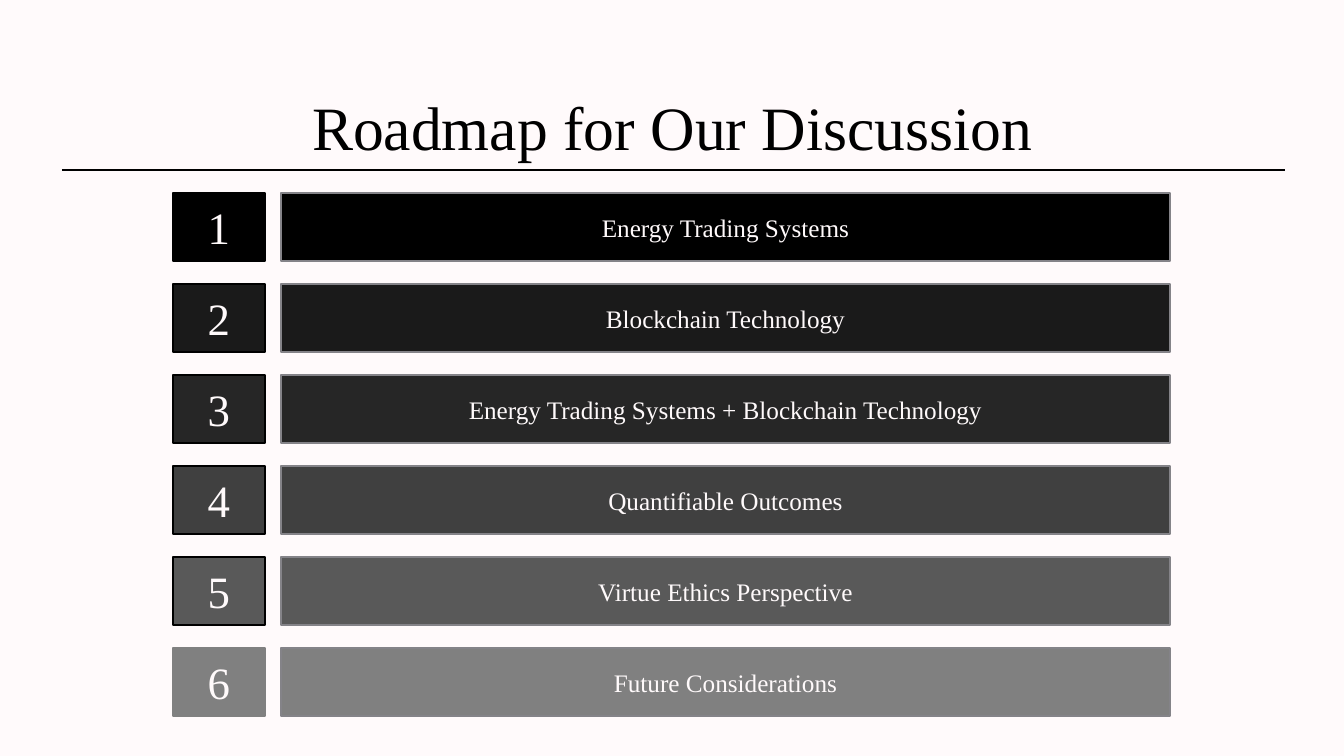
from lxml import etree
from pptx import Presentation
from pptx.dml.color import RGBColor
from pptx.enum.shapes import MSO_CONNECTOR, MSO_SHAPE
from pptx.enum.text import MSO_ANCHOR, PP_ALIGN
from pptx.oxml.ns import qn
from pptx.util import Pt

RECTANGLE = MSO_SHAPE.RECTANGLE
STRAIGHT = MSO_CONNECTOR.STRAIGHT
MIDDLE = MSO_ANCHOR.MIDDLE
CENTER = PP_ALIGN.CENTER

FONT = "Times New Roman"
BLACK, GREY, EDGE, PAPER = "000000", "808080", "848388", "FFFAFB"
EMU_PER_PX = 914400 / 100.8


def px(*lengths):
    """Turn pixel lengths into a list of EMU."""
    return [round(length * EMU_PER_PX) for length in lengths]


def write(shape, text, size, color):
    """Set one centred line of text in the shape."""
    frame = shape.text_frame
    frame.word_wrap = True
    frame.vertical_anchor = MIDDLE
    para = frame.paragraphs[0]
    para.text = text
    para.alignment = CENTER
    para.font.name = FONT
    para.font.size = Pt(size)
    para.font.color.rgb = RGBColor.from_string(color)


deck = Presentation()
deck.slide_width, deck.slide_height = px(1344, 756)
page = deck.slides.add_slide(deck.slide_layouts[6])
page.background.fill.solid()
page.background.fill.fore_color.rgb = RGBColor.from_string(PAPER)

title = page.shapes.add_textbox(*px(93, 74, 1159, 113))
write(title, "Roadmap for Our Discussion", 44, BLACK)
title.text_frame.paragraphs[0].line_spacing = 0.9

rule = page.shapes.add_connector(STRAIGHT, *px(62, 170, 1285, 170))
rule.line.color.rgb = RGBColor.from_string(BLACK)
rule.line.width = Pt(1.5)
etree.SubElement(rule._element.spPr, qn("a:effectLst"))

# Agenda rows: topic, fill, outline of the number box
topics = [
    ("Energy Trading Systems", "000000", BLACK),
    ("Blockchain Technology", "1A1A1A", BLACK),
    ("Energy Trading Systems + Blockchain Technology", "262626", BLACK),
    ("Quantifiable Outcomes", "404040", BLACK),
    ("Virtue Ethics Perspective", "595959", BLACK),
    ("Future Considerations", GREY, GREY),
]
FIRST_TOP, ROW_PITCH, ROW_HEIGHT = 193, 91, 68

for row, (topic, fill, number_edge) in enumerate(topics):
    top = FIRST_TOP + row * ROW_PITCH
    cells = [
        (173, 92, str(row + 1), 32, number_edge),
        (281, 889, topic, 18, EDGE),
    ]
    for left, width, text, size, edge in cells:
        box = page.shapes.add_shape(RECTANGLE, *px(left, top, width, ROW_HEIGHT))
        box.shadow.inherit = False
        box.fill.solid()
        box.fill.fore_color.rgb = RGBColor.from_string(fill)
        box.line.color.rgb = RGBColor.from_string(edge)
        box.line.width = Pt(1)
        write(box, text, size, PAPER)

deck.save("out.pptx")
